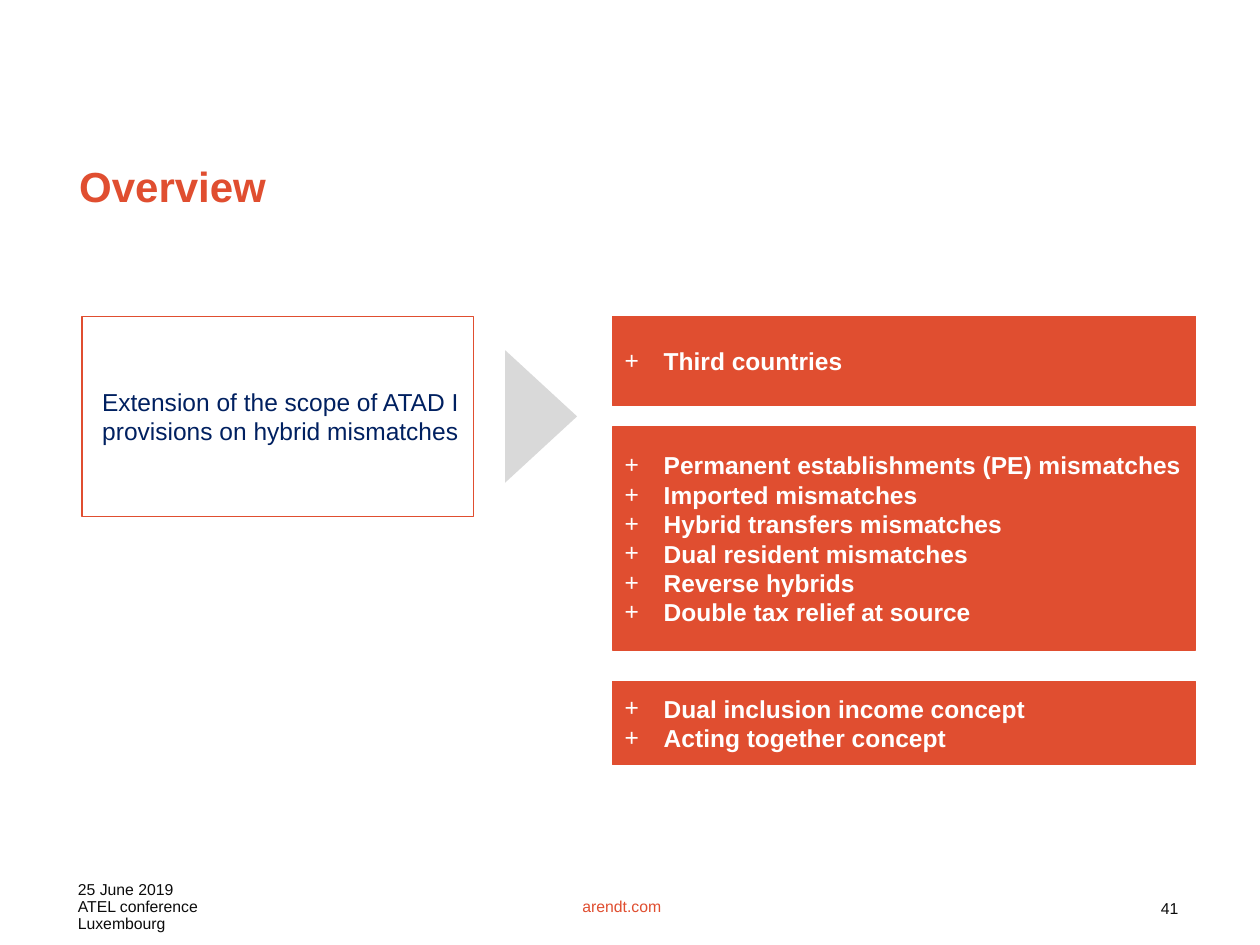
from lxml.etree import SubElement
from pptx import Presentation
from pptx.dml.color import RGBColor
from pptx.enum.shapes import MSO_SHAPE as Shape
from pptx.enum.text import MSO_ANCHOR as Anchor, PP_ALIGN as Align
from pptx.oxml.ns import qn
from pptx.util import Inches, Pt

ORANGE, NAVY, GREY = "E04E30", "002060", "D9D9D9"
WHITE, BLACK = "FFFFFF", "0C0C0C"


def color(value):
    return RGBColor.from_string(value)


class SlideBuilder:
    """Holds the text style and the slide that elements are added to."""

    font_name = "Arial"
    indent = Inches(0.31)

    def __init__(self, slide):
        self.slide = slide

    def fill_text(self, frame, lines, size, ink, bold=False, align=Align.LEFT,
                  anchor=Anchor.MIDDLE, spacing=1.0, bullet=None):
        frame.word_wrap = True
        frame.vertical_anchor = anchor
        for index, line in enumerate(lines):
            paragraph = frame.paragraphs[0] if index == 0 else frame.add_paragraph()
            paragraph.text = line
            paragraph.alignment = align
            paragraph.line_spacing = spacing
            if bullet:
                self.add_bullet(paragraph, bullet)
            font = paragraph.font
            font.name, font.size, font.bold = self.font_name, Pt(size), bold
            font.color.rgb = color(ink)

    def add_bullet(self, paragraph, character):
        properties = paragraph._p.get_or_add_pPr()
        properties.set("marL", str(self.indent))
        properties.set("indent", str(-self.indent))
        SubElement(properties, qn("a:buFont"), typeface=self.font_name)
        SubElement(properties, qn("a:buChar"), char=character)

    def text(self, left, top, width, height, lines, size, ink, **style):
        box = self.slide.shapes.add_textbox(
            Inches(left), Inches(top), Inches(width), Inches(height))
        self.fill_text(box.text_frame, lines, size, ink, **style)

    def shape(self, kind, left, top, width, height, fill=None, line=None):
        shape = self.slide.shapes.add_shape(
            kind, Inches(left), Inches(top), Inches(width), Inches(height))
        shape.shadow.inherit = False
        if fill:
            shape.fill.solid()
            shape.fill.fore_color.rgb = color(fill)
        else:
            shape.fill.background()
        if line:
            shape.line.color.rgb = color(line)
            shape.line.width = Pt(0.75)
        else:
            shape.line.fill.background()
        return shape

    def topic(self, left, top, width, height, lines):
        frame = self.shape(Shape.RECTANGLE, left, top, width, height, fill=ORANGE,
                           line=ORANGE).text_frame
        self.fill_text(frame, lines, 14, WHITE, bold=True, bullet="+")

    def scope(self, left, top, width, height, statement):
        frame = self.shape(Shape.RECTANGLE, left, top, width, height,
                           line=ORANGE).text_frame
        frame.margin_left, frame.margin_right = Inches(0.14), Inches(0.1)
        self.fill_text(frame, [statement], 14, NAVY, align=Align.CENTER)

    def arrow(self, left, top, width, height):
        self.shape(Shape.ISOSCELES_TRIANGLE, left, top, width, height,
                   fill=GREY).rotation = 90


def main():
    presentation = Presentation()
    presentation.slide_width, presentation.slide_height = Inches(10), Inches(7.5)
    builder = SlideBuilder(presentation.slides.add_slide(presentation.slide_layouts[6]))

    builder.text(0.52, 6.95, 1.86, 0.41, ["25 June 2019", "ATEL conference Luxembourg"],
                 9, BLACK, anchor=Anchor.TOP, spacing=0.9)
    builder.text(8.98, 7.08, 0.47, 0.29, ["41"], 9, BLACK,
                 align=Align.RIGHT, anchor=Anchor.TOP)
    builder.text(4.1, 7.02, 1.67, 0.34, ["arendt.com"], 9, ORANGE, align=Align.CENTER)
    builder.text(0.53, 1.09, 8.92, 0.82, ["Overview"], 24, ORANGE, bold=True, spacing=0.9)

    builder.scope(0.65, 2.51, 3.11, 1.59,
                  "Extension of the scope of ATAD I provisions on hybrid mismatches")
    builder.arrow(3.77, 3.02, 1.05, 0.57)

    topics = [
        (2.51, 0.71, ["Third countries"]),
        (3.39, 1.77, ["Permanent establishments (PE) mismatches",
                      "Imported mismatches",
                      "Hybrid transfers mismatches",
                      "Dual resident mismatches",
                      "Reverse hybrids",
                      "Double tax relief at source"]),
        (5.41, 0.66, ["Dual inclusion income concept", "Acting together concept"]),
    ]
    for top, height, lines in topics:
        builder.topic(4.86, top, 4.63, height, lines)

    presentation.save("out.pptx")


if __name__ == "__main__":
    main()
